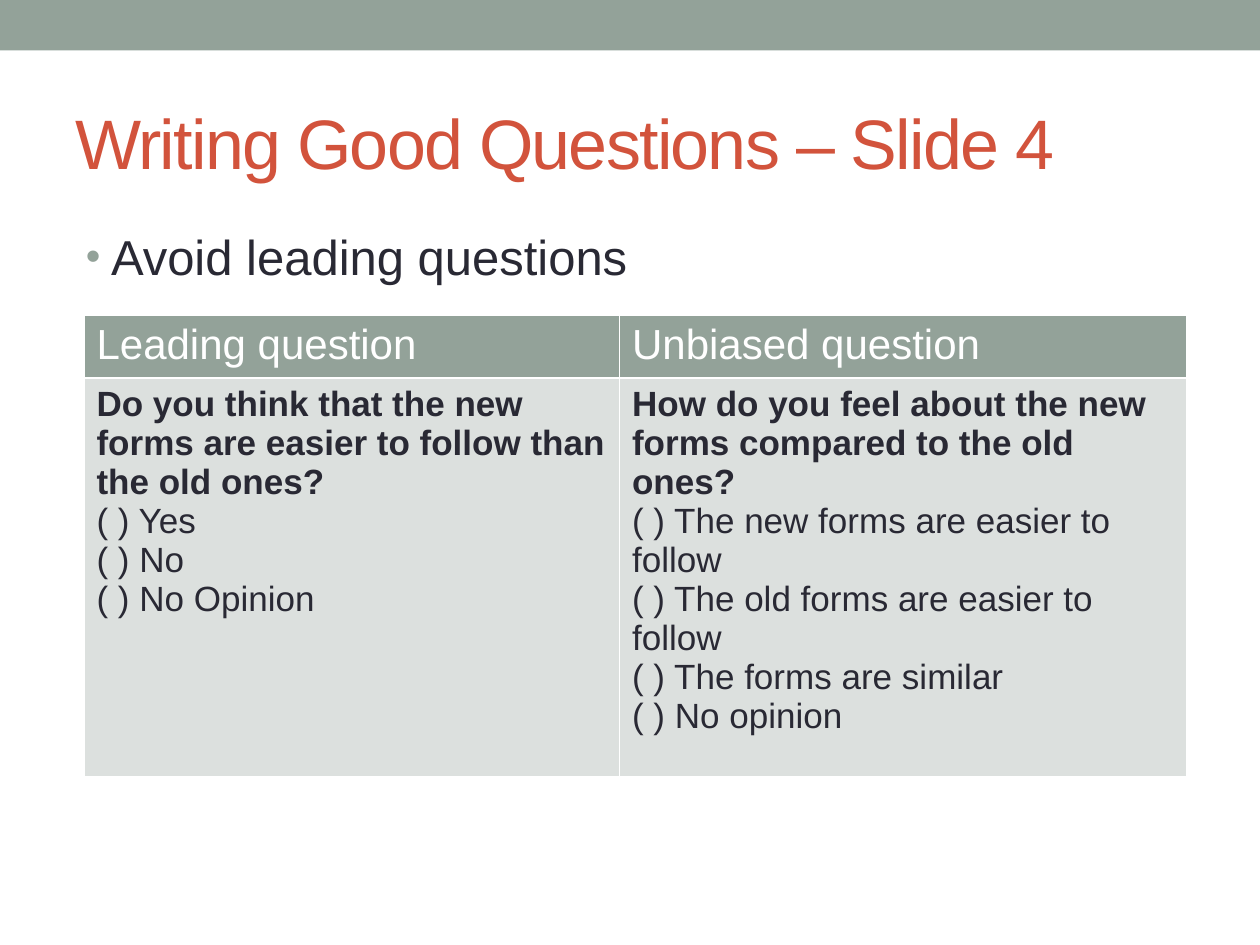
from dataclasses import dataclass

from lxml import etree
from pptx import Presentation
from pptx.dml.color import RGBColor
from pptx.enum.shapes import MSO_SHAPE
from pptx.enum.text import MSO_ANCHOR
from pptx.oxml.ns import qn
from pptx.util import Pt

RECTANGLE = MSO_SHAPE.RECTANGLE
TOP = MSO_ANCHOR.TOP
MIDDLE = MSO_ANCHOR.MIDDLE
FONT = "Arial"
SAGE, RUST, INK = "93A299", "D2533C", "292934"
WHITE, PALE = "FFFFFF", "DCE0DE"
BLANK_LAYOUT = 6


@dataclass
class Box:
    left: float
    top: float
    width: float
    height: float

    def lengths(self):
        return Pt(self.left), Pt(self.top), Pt(self.width), Pt(self.height)


@dataclass
class QuestionColumn:
    heading: str
    question: str
    answers: list[str]
    width: float

    def body(self) -> str:
        return "\n".join([self.question] + [f"( ) {answer}" for answer in self.answers])


COLUMNS = [
    QuestionColumn(
        "Leading question",
        "Do you think that the new forms are easier to follow than the old ones?",
        ["Yes", "No", "No Opinion"],
        306,
    ),
    QuestionColumn(
        "Unbiased question",
        "How do you feel about the new forms compared to the old ones?",
        [
            "The new forms are easier to follow",
            "The old forms are easier to follow",
            "The forms are similar",
            "No opinion",
        ],
        324,
    ),
]
ROW_HEIGHTS = [33, 228]


def color(value: str) -> RGBColor:
    return RGBColor.from_string(value)


def format_runs(paragraph, size: float, text_color: str) -> None:
    for run in paragraph.runs:
        run.font.name = FONT
        run.font.size = Pt(size)
        run.font.bold = False
        run.font.color.rgb = color(text_color)


def add_text(slide, box: Box, text: str, size: float, text_color: str, anchor):
    text_frame = slide.shapes.add_textbox(*box.lengths()).text_frame
    text_frame.word_wrap = True
    text_frame.vertical_anchor = anchor
    text_frame.text = text
    paragraph = text_frame.paragraphs[0]
    format_runs(paragraph, size, text_color)
    return paragraph


def add_bullet(paragraph, indent: float) -> None:
    properties = paragraph._p.get_or_add_pPr()
    properties.set("marL", str(Pt(indent)))
    properties.set("indent", str(Pt(-indent)))
    bullet_color = etree.SubElement(properties, qn("a:buClr"))
    etree.SubElement(bullet_color, qn("a:srgbClr"), val=SAGE)
    etree.SubElement(properties, qn("a:buSzPct"), val="85000")
    etree.SubElement(properties, qn("a:buFont"), typeface=FONT)
    etree.SubElement(properties, qn("a:buChar"), char="•")


def set_borders(cell, line_color: str, width: float) -> None:
    properties = cell._tc.get_or_add_tcPr()
    for index, side in enumerate(("lnL", "lnR", "lnT", "lnB")):
        line = etree.Element(qn(f"a:{side}"), w=str(Pt(width)))
        fill = etree.SubElement(line, qn("a:solidFill"))
        etree.SubElement(fill, qn("a:srgbClr"), val=line_color)
        properties.insert(index, line)


def fill_cell(cell, text: str, size: float, text_color: str, fill: str):
    cell.text_frame.text = ""
    paragraph = cell.text_frame.paragraphs[0]
    paragraph.text = text
    format_runs(paragraph, size, text_color)
    cell.fill.solid()
    cell.fill.fore_color.rgb = color(fill)
    set_borders(cell, WHITE, 1)
    return paragraph


def add_question_table(slide, left: float, top: float) -> None:
    box = Box(left, top, sum(column.width for column in COLUMNS), sum(ROW_HEIGHTS))
    table = slide.shapes.add_table(len(ROW_HEIGHTS), len(COLUMNS), *box.lengths()).table
    for row, height in zip(table.rows, ROW_HEIGHTS):
        row.height = Pt(height)
    for index, column in enumerate(COLUMNS):
        table.columns[index].width = Pt(column.width)
        fill_cell(table.cell(0, index), column.heading, 24, WHITE, SAGE)
        paragraph = fill_cell(table.cell(1, index), column.body(), 20, INK, PALE)
        paragraph.runs[0].font.bold = True


def main() -> None:
    presentation = Presentation()
    presentation.slide_width = Pt(720)
    presentation.slide_height = Pt(540)
    slide = presentation.slides.add_slide(presentation.slide_layouts[BLANK_LAYOUT])

    band = slide.shapes.add_shape(RECTANGLE, *Box(0, 0, 720, 28.8).lengths())
    band.shadow.inherit = False
    band.fill.solid()
    band.fill.fore_color.rgb = color(SAGE)
    band.line.fill.background()

    title = add_text(
        slide, Box(36, 42, 648, 78), "Writing Good Questions – Slide 4", 40, RUST, MIDDLE
    )
    title.runs[0].font._element.set("spc", "-100")

    advice = add_text(
        slide, Box(42, 126, 648, 356), "Avoid leading questions", 28, INK, TOP
    )
    advice.space_before = Pt(4)
    add_bullet(advice, 14.4)

    add_question_table(slide, 48, 180)
    presentation.save("out.pptx")


if __name__ == "__main__":
    main()
